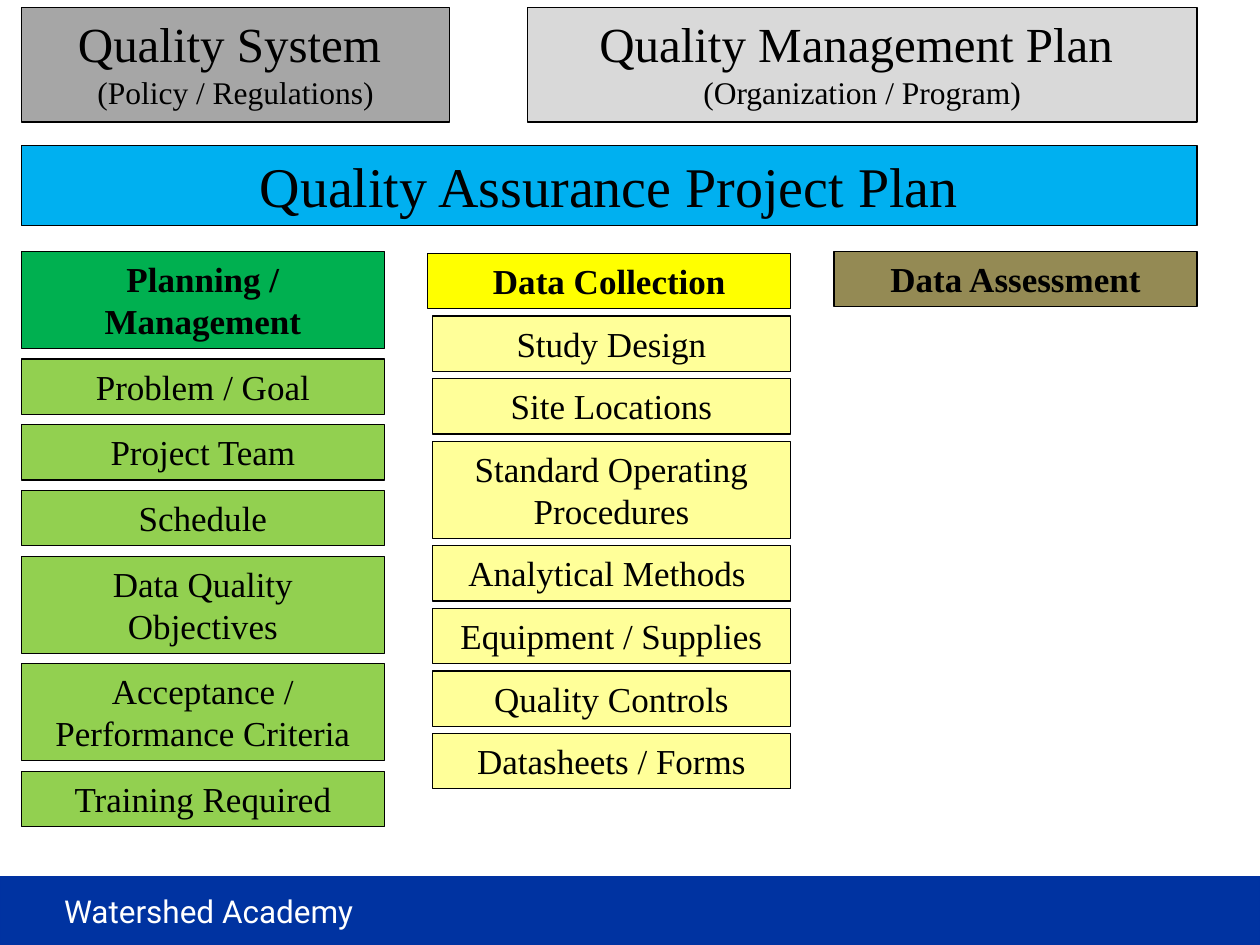
from pptx import Presentation
from pptx.dml.color import RGBColor
from pptx.enum.shapes import MSO_SHAPE
from pptx.enum.text import MSO_ANCHOR, PP_ALIGN
from pptx.util import Pt

RECTANGLE = MSO_SHAPE.RECTANGLE
TOP = MSO_ANCHOR.TOP
CENTER = PP_ALIGN.CENTER
LEFT = PP_ALIGN.LEFT

BLACK = RGBColor(0x00, 0x00, 0x00)
WHITE = RGBColor(0xFF, 0xFF, 0xFF)
DARK_GRAY = RGBColor(0xA6, 0xA6, 0xA6)
LIGHT_GRAY = RGBColor(0xD9, 0xD9, 0xD9)
SKY_BLUE = RGBColor(0x00, 0xB0, 0xF0)
GREEN = RGBColor(0x00, 0xB0, 0x50)
LIGHT_GREEN = RGBColor(0x92, 0xD0, 0x50)
YELLOW = RGBColor(0xFF, 0xFF, 0x00)
LIGHT_YELLOW = RGBColor(0xFF, 0xFF, 0x99)
OLIVE = RGBColor(0x94, 0x8A, 0x54)
FOOTER_BLUE = RGBColor(0x00, 0x33, 0xA1)
FOOTER_LINE = RGBColor(0x00, 0x32, 0xA1)

SERIF = "Times New Roman"
ONE_LINE = 31.6
TWO_LINES = 55.4
MARGIN = 12.24
COLUMN_WIDTH = 207.4


def write_lines(shape, lines, alignment=CENTER):
    """Fill the shape with (text, font format) pairs, one paragraph each."""
    frame = shape.text_frame
    frame.word_wrap = True
    frame.vertical_anchor = TOP
    for index, (text, font_format) in enumerate(lines):
        paragraph = frame.add_paragraph() if index else frame.paragraphs[0]
        paragraph.alignment = alignment
        run = paragraph.add_run()
        run.text = text
        values = {"name": SERIF, "color": BLACK, **font_format}
        run.font.color.rgb = values.pop("color")
        for name, value in values.items():
            setattr(run.font, name, value)


def add_box(slide, box, fill, lines=(), line_color=BLACK):
    shape = slide.shapes.add_shape(RECTANGLE, *(Pt(length) for length in box))
    shape.shadow.inherit = False
    shape.fill.solid()
    shape.fill.fore_color.rgb = fill
    shape.line.color.rgb = line_color
    shape.line.width = Pt(0.75)
    write_lines(shape, lines)


def add_heading(slide, box, fill, title, scope):
    add_box(slide, box, fill, [(title, {"size": Pt(28)}), (scope, {"size": Pt(18)})])


def add_column(slide, left, top, gap, header, items=(), item_fill=None, indent=0):
    """Stack a bold header and its items; each entry is text and height."""
    title, title_height, title_fill = header
    add_box(slide, (left, top, COLUMN_WIDTH, title_height), title_fill,
            [(title, {"size": Pt(20), "bold": True})])
    top += title_height + gap
    for text, height in items:
        box = (left + indent, top, COLUMN_WIDTH - indent, height)
        add_box(slide, box, item_fill, [(text, {"size": Pt(20)})])
        top += height + gap


def add_footer(slide, left, top, width, height):
    add_box(slide, (left, top, width, height), FOOTER_BLUE, line_color=FOOTER_LINE)
    label = slide.shapes.add_textbox(Pt(left + 29.5), Pt(top + 5), Pt(242), Pt(29.1))
    write_lines(label, [("Watershed Academy",
                         {"name": "Roboto", "size": Pt(18), "color": WHITE})], LEFT)


def main():
    presentation = Presentation()
    presentation.slide_width = Pt(720)
    presentation.slide_height = Pt(540)
    slide = presentation.slides.add_slide(presentation.slide_layouts[6])

    add_footer(slide, 0, 501.1, 720, 38.4)
    add_heading(slide, (MARGIN, 4.3, 244.8, 65.4), DARK_GRAY,
                "Quality System ", "(Policy / Regulations)")
    add_heading(slide, (301.4, 4.3, 382.6, 65.4), LIGHT_GRAY,
                "Quality Management Plan ", "(Organization / Program)")
    add_box(slide, (MARGIN, 83, 671.8, 46), SKY_BLUE,
            [("Quality Assurance Project Plan", {"size": Pt(32)})])

    add_column(slide, MARGIN, 143.7, 6, ("Planning / Management", TWO_LINES, GREEN), [
        ("Problem / Goal", ONE_LINE),
        ("Project Team", ONE_LINE),
        ("Schedule", ONE_LINE),
        ("Data Quality Objectives", TWO_LINES),
        ("Acceptance / Performance Criteria", TWO_LINES),
        ("Training Required", ONE_LINE),
    ], LIGHT_GREEN)
    add_column(slide, 244.5, 144.8, 4.2, ("Data Collection", ONE_LINE, YELLOW), [
        ("Study Design", ONE_LINE),
        ("Site Locations", ONE_LINE),
        ("Standard Operating Procedures", TWO_LINES),
        ("Analytical Methods ", ONE_LINE),
        ("Equipment / Supplies", ONE_LINE),
        ("Quality Controls", ONE_LINE),
        ("Datasheets / Forms", ONE_LINE),
    ], LIGHT_YELLOW, indent=2.5)
    add_column(slide, 476.6, 143.7, 0, ("Data Assessment", ONE_LINE, OLIVE))

    presentation.save("out.pptx")


if __name__ == "__main__":
    main()
